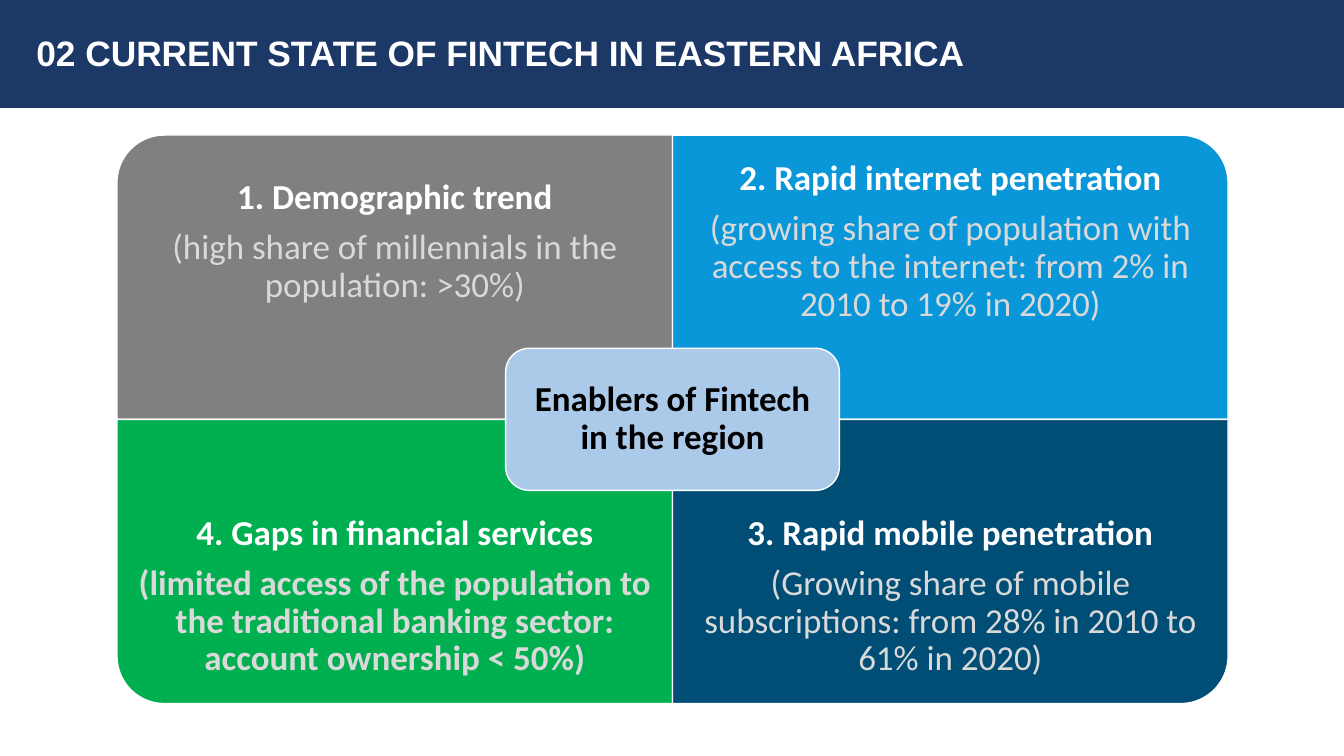
from dataclasses import dataclass

from pptx import Presentation
from pptx.dml.color import RGBColor
from pptx.enum.shapes import MSO_SHAPE
from pptx.enum.text import MSO_ANCHOR, MSO_AUTO_SIZE, PP_ALIGN
from pptx.shapes.autoshape import Shape
from pptx.slide import Slide
from pptx.text.text import TextFrame
from pptx.util import Inches, Pt


@dataclass(frozen=True)
class Theme:
    navy: str = "1C3867"
    gray: str = "808080"
    blue: str = "0A97D9"
    green: str = "00B050"
    deep: str = "004E76"
    pale: str = "ABC9E9"
    white: str = "FFFFFF"
    soft: str = "D9D9D9"
    black: str = "000000"
    head_font: str = "Arial"
    text_font: str = "Calibri"
    head_size: float = 25.2
    text_size: float = 25
    gap: float = 8.75


@dataclass(frozen=True)
class Tile:
    col: int
    row: int
    turn: int
    fill: str
    head: str
    note: str
    bold: bool = False


THEME = Theme()
MID_X, MID_Y = 6.67, 4.16
TILE_W, TILE_H = 5.51, 2.82
TEXT_H = 2.12
HUB_W, HUB_H = 3.31, 1.41

TILES = [
    Tile(0, 0, 270, THEME.gray, "1. Demographic trend",
         "(high share of millennials in the population: >30%)"),
    Tile(1, 0, 0, THEME.blue, "2. Rapid internet penetration",
         "(growing share of population with access to the internet: "
         "from 2% in 2010 to 19% in 2020)"),
    Tile(0, 1, 180, THEME.green, "4. Gaps in financial services",
         "(limited access of the population to the traditional banking sector: "
         "account ownership < 50%)", True),
    Tile(1, 1, 90, THEME.deep, "3. Rapid mobile penetration",
         "(Growing share of mobile subscriptions: from 28% in 2010 to 61% in 2020)"),
]


def add_block(slide: Slide, kind: MSO_SHAPE, left: float, top: float,
              width: float, height: float, fill: str, line: bool = True) -> Shape:
    block = slide.shapes.add_shape(
        kind, Inches(left), Inches(top), Inches(width), Inches(height))
    block.shadow.inherit = False
    block.fill.solid()
    block.fill.fore_color.rgb = RGBColor.from_string(fill)
    if line:
        block.line.color.rgb = RGBColor.from_string(THEME.white)
        block.line.width = Pt(1)
    else:
        block.line.fill.background()
    return block


def set_frame(frame: TextFrame, inset: float) -> None:
    frame.word_wrap = True
    frame.auto_size = MSO_AUTO_SIZE.NONE
    frame.vertical_anchor = MSO_ANCHOR.MIDDLE
    frame.margin_left = frame.margin_right = Inches(inset)
    frame.margin_top = frame.margin_bottom = Inches(inset)


def add_line(frame: TextFrame, text: str, color: str, bold: bool = True,
             first: bool = True, font: str = THEME.text_font,
             size: float = THEME.text_size,
             align: PP_ALIGN = PP_ALIGN.CENTER) -> None:
    para = frame.paragraphs[0] if first else frame.add_paragraph()
    para.alignment = align
    para.line_spacing = 0.9
    para.space_after = Pt(THEME.gap)
    run = para.add_run()
    run.text = text
    run.font.name = font
    run.font.size = Pt(size)
    run.font.bold = bold
    run.font.color.rgb = RGBColor.from_string(color)


def add_head(slide: Slide) -> None:
    band = add_block(slide, MSO_SHAPE.RECTANGLE, 0, 0, 13.33, 1.07, THEME.navy, False)
    slide.shapes._spTree.insert(2, band._element)
    title = slide.shapes.title
    title.left, title.top = Inches(0.26), Inches(0.21)
    title.width, title.height = Inches(12.91), Inches(0.67)
    set_frame(title.text_frame, 0.1)
    add_line(title.text_frame, "02 CURRENT STATE OF FINTECH IN EASTERN AFRICA",
             THEME.white, font=THEME.head_font, size=THEME.head_size,
             align=PP_ALIGN.LEFT)


def add_tile(slide: Slide, tile: Tile) -> None:
    left = MID_X + (tile.col - 1) * TILE_W
    top = MID_Y + (tile.row - 1) * TILE_H
    width, height = (TILE_H, TILE_W) if tile.turn % 180 else (TILE_W, TILE_H)
    block = add_block(slide, MSO_SHAPE.ROUND_1_RECTANGLE,
                      left + (TILE_W - width) / 2, top + (TILE_H - height) / 2,
                      width, height, tile.fill)
    block.rotation = tile.turn
    box = slide.shapes.add_textbox(
        Inches(left), Inches(top + tile.row * (TILE_H - TEXT_H)),
        Inches(TILE_W), Inches(TEXT_H))
    set_frame(box.text_frame, 0.19)
    add_line(box.text_frame, tile.head, THEME.white)
    add_line(box.text_frame, tile.note, THEME.soft, tile.bold, first=False)


def add_hub(slide: Slide) -> None:
    hub = add_block(slide, MSO_SHAPE.ROUNDED_RECTANGLE, MID_X - HUB_W / 2,
                    MID_Y - HUB_H / 2, HUB_W, HUB_H, THEME.pale)
    set_frame(hub.text_frame, 0.1)
    add_line(hub.text_frame, "Enablers of Fintech in the region", THEME.black)


def main() -> None:
    deck = Presentation()
    deck.slide_width, deck.slide_height = Inches(13.33), Inches(7.5)
    slide = deck.slides.add_slide(deck.slide_layouts[5])
    add_head(slide)
    for tile in TILES:
        add_tile(slide, tile)
    add_hub(slide)
    deck.save("out.pptx")


if __name__ == "__main__":
    main()
